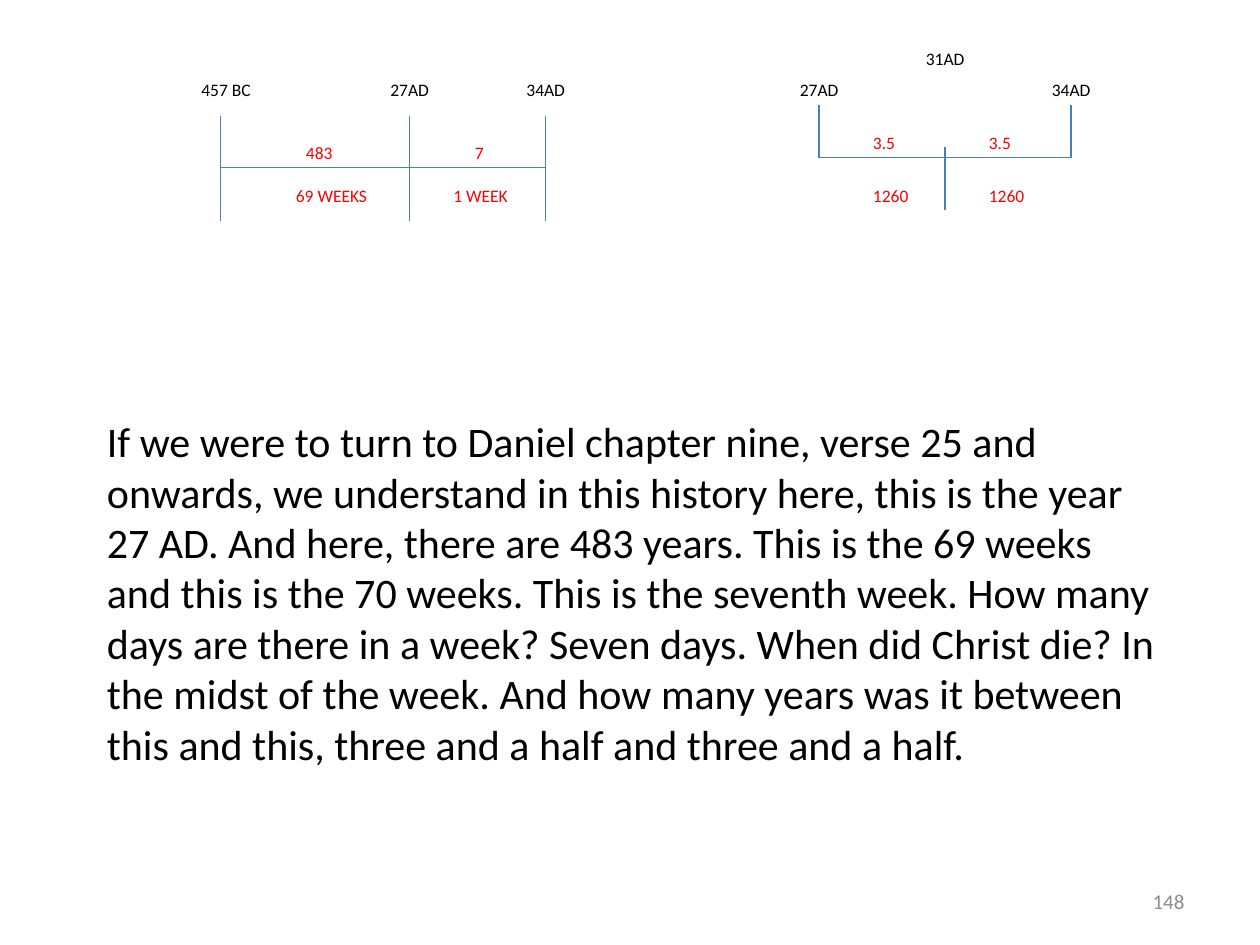
from lxml import etree
from pptx import Presentation
from pptx import util as u
from pptx.dml.color import RGBColor
from pptx.enum import shapes, text
from pptx.oxml.ns import qn

BLACK, RED, BLUE, GREY = "000000", "FF0000", "4B7EBC", "8C8C8C"
PASSAGE = (
    "If we were to turn to Daniel chapter nine, verse 25 and onwards, we understand "
    "in this history here, this is the year 27 AD. And here, there are 483 years. "
    "This is the 69 weeks and this is the 70 weeks. This is the seventh week. "
    "How many days are there in a week? Seven days. When did Christ die? "
    "In the midst of the week. And how many years was it between this and this, "
    "three and a half and three and a half."
)


def colour(value):
    return RGBColor.from_string(value)


class TimelinePage:
    font = "Calibri"
    line_width = u.Pt(0.75)

    def __init__(self, page):
        self.page = page

    def line(self, x1, y1, x2, y2):
        connector = self.page.shapes.add_connector(
            shapes.MSO_CONNECTOR.STRAIGHT, *map(u.Inches, (x1, y1, x2, y2)))
        connector.line.color.rgb = colour(BLUE)
        connector.line.width = self.line_width
        etree.SubElement(connector._element.spPr, qn("a:effectLst"))

    def text(self, words, left, top, width, height=0.27, size=10, ink=BLACK):
        box = self.page.shapes.add_textbox(*map(u.Inches, (left, top, width, height)))
        frame = box.text_frame
        frame.word_wrap = True
        frame.text = words
        frame.auto_size = text.MSO_AUTO_SIZE.SHAPE_TO_FIT_TEXT
        font = frame.paragraphs[0].runs[0].font
        font.name, font.size = self.font, u.Pt(size)
        font.color.rgb = colour(ink)
        return frame

    def page_number(self, number):
        frame = self.text(str(number), 7.17, 6.95, 2.33, 0.4, 12, GREY)
        frame.auto_size = text.MSO_AUTO_SIZE.NONE
        frame.vertical_anchor = text.MSO_ANCHOR.MIDDLE
        frame.paragraphs[0].alignment = text.PP_ALIGN.RIGHT


def draw_seventy_weeks(timeline):
    axis = 1.33
    timeline.line(1.75, axis, 4.33, axis)
    for x in (1.75, 3.25, 4.33):
        timeline.line(x, 0.92, x, axis)
        timeline.line(x, axis, x, 1.75)
    for year, left, width in (("457 BC", 1.5, 0.75), ("27AD", 3, 0.83), ("34AD", 4.08, 0.75)):
        timeline.text(year, left, 0.58, width)
    for span, left, top, width in (
        ("483", 2.33, 1.08, 0.67),
        ("7", 3.67, 1.08, 0.5),
        ("69 WEEKS", 2.25, 1.42, 1.08),
        ("1 WEEK", 3.5, 1.42, 1.08),
    ):
        timeline.text(span, left, top, width, ink=RED)


def draw_last_week(timeline):
    axis = 1.25
    timeline.line(6.5, axis, 8.5, axis)
    for x in (6.5, 8.5):
        timeline.line(x, 0.83, x, axis)
    timeline.line(7.5, 1.17, 7.5, 1.67)
    for year, left, top, width in (
        ("27AD", 6.25, 0.58, 0.67),
        ("31AD", 7.25, 0.33, 0.67),
        ("34AD", 8.25, 0.58, 0.58),
    ):
        timeline.text(year, left, top, width)
    for left in (6.83, 7.75):
        timeline.text("3.5", left, 1, 0.5, ink=RED)
        timeline.text("1260", left, 1.42, 0.75, ink=RED)


def main():
    deck = Presentation()
    deck.slide_width, deck.slide_height = u.Inches(10), u.Inches(7.5)
    timeline = TimelinePage(deck.slides.add_slide(deck.slide_layouts[6]))
    draw_seventy_weeks(timeline)
    draw_last_week(timeline)
    timeline.text(PASSAGE, 0.75, 3.25, 8.58, 2.93, 24)
    timeline.page_number(148)
    deck.save("out.pptx")


if __name__ == "__main__":
    main()
